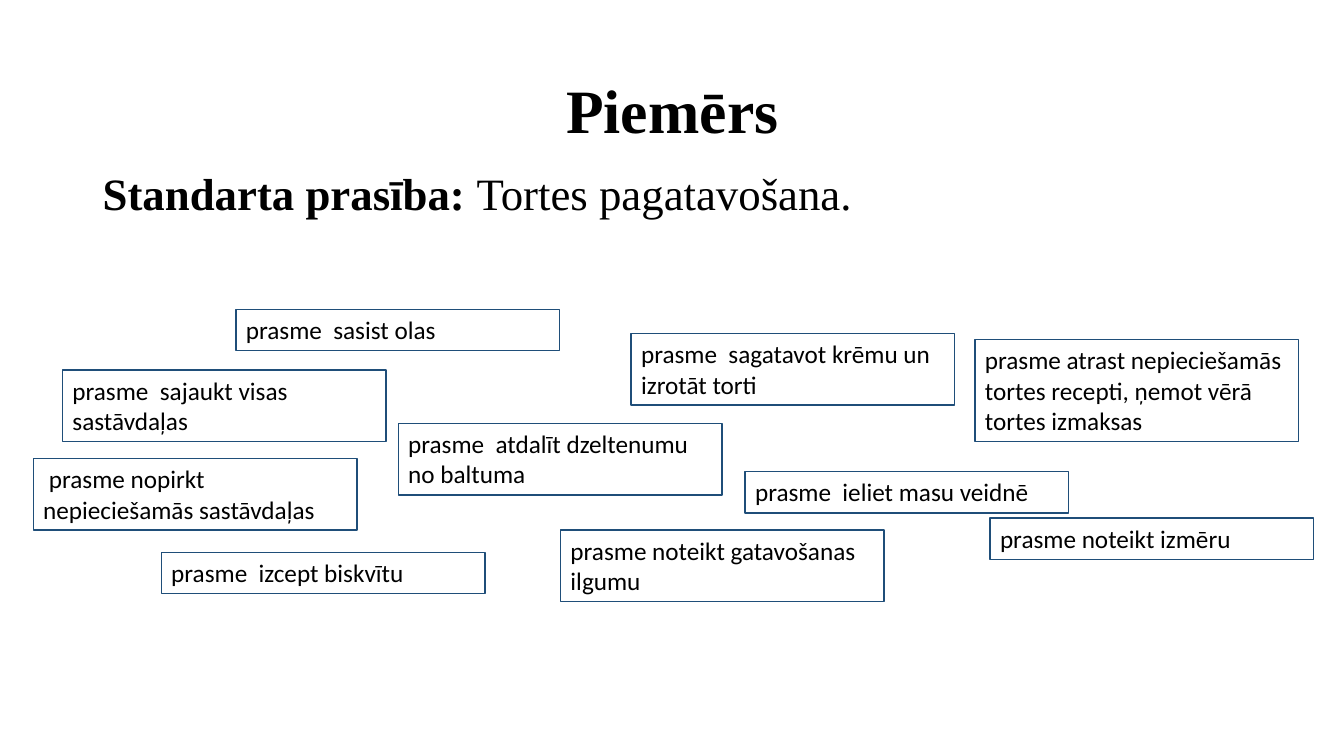
from dataclasses import dataclass

import pptx
import pptx.util
import pptx.dml.color
import pptx.enum.shapes
import pptx.enum.text

PX = 9144
ANCHOR = pptx.enum.text.MSO_ANCHOR
ALIGN = pptx.enum.text.PP_ALIGN


@dataclass(frozen=True)
class Theme:
    ink: str = "000000"
    paper: str = "FFFFFF"
    border: str = "1F4E79"
    heading_font: str = "Times New Roman"
    skill_font: str = "Calibri"
    title_size: int = 44
    body_size: int = 32
    skill_size: int = 18


THEME = Theme()
SKILL_WIDTH = 321
FIRST_LINE, NEXT_LINE = 41, 30

SKILLS = [
    (967, 337, 3, "prasme atrast nepieciešamās tortes recepti, ņemot vērā tortes izmaksas"),
    (556, 526, 2, "prasme noteikt gatavošanas ilgumu"),
    (982, 514, 1, "prasme noteikt izmēru"),
    (33, 455, 2, " prasme nopirkt nepieciešamās sastāvdaļas"),
    (234, 307, 1, "prasme  sasist olas"),
    (395, 420, 2, "prasme  atdalīt dzeltenumu no baltuma"),
    (62, 367, 2, "prasme  sajaukt visas sastāvdaļas"),
    (739, 468, 1, "prasme  ieliet masu veidnē"),
    (160, 548, 1, "prasme  izcept biskvītu"),
    (626, 331, 2, "prasme  sagatavot krēmu un izrotāt torti"),
]


def rgb(color):
    return pptx.dml.color.RGBColor.from_string(color)


def emu(box):
    return [pptx.util.Emu(n * PX) for n in box]


def style_run(r, font, size, bold=False):
    r.font.name = font
    r.font.size = pptx.util.Pt(size)
    r.font.bold = bold
    r.font.color.rgb = rgb(THEME.ink)


def add_text(s, box, parts, size, anchor, align):
    tf = s.shapes.add_textbox(*emu(box)).text_frame
    tf.word_wrap = True
    tf.vertical_anchor = anchor
    p = tf.paragraphs[0]
    p.alignment = align
    p.line_spacing = 0.9
    for text, bold in parts:
        r = p.add_run()
        r.text = text
        style_run(r, THEME.heading_font, size, bold)


def add_title(s, box):
    add_text(s, box, [("Piemērs", True)], THEME.title_size, ANCHOR.MIDDLE, ALIGN.CENTER)


def add_requirement(s, box):
    parts = [("Standarta prasība: ", True), ("Tortes pagatavošana.", False)]
    add_text(s, box, parts, THEME.body_size, ANCHOR.TOP, ALIGN.LEFT)


def add_skill(s, box, text):
    sp = s.shapes.add_shape(pptx.enum.shapes.MSO_SHAPE.RECTANGLE, *emu(box))
    sp.shadow.inherit = False
    sp.fill.solid()
    sp.fill.fore_color.rgb = rgb(THEME.paper)
    sp.line.color.rgb = rgb(THEME.border)
    sp.line.width = pptx.util.Pt(1)
    tf = sp.text_frame
    tf.text = text
    tf.word_wrap = True
    tf.auto_size = pptx.enum.text.MSO_AUTO_SIZE.SHAPE_TO_FIT_TEXT
    tf.vertical_anchor = ANCHOR.TOP
    p = tf.paragraphs[0]
    p.alignment = ALIGN.LEFT
    style_run(p.runs[0], THEME.skill_font, THEME.skill_size)


def add_skills(s, box):
    left, top, width = box
    for x, y, lines, text in SKILLS:
        height = FIRST_LINE + NEXT_LINE * (lines - 1)
        add_skill(s, (left + x, top + y, width, height), text)


def main():
    prs = pptx.Presentation()
    prs.slide_width, prs.slide_height = emu((1333, 750))
    s = prs.slides.add_slide(prs.slide_layouts[6])
    add_title(s, (92, 40, 1150, 145))
    add_requirement(s, (92, 165, 1150, 511))
    add_skills(s, (0, 0, SKILL_WIDTH))
    prs.save("out.pptx")


if __name__ == "__main__":
    main()
